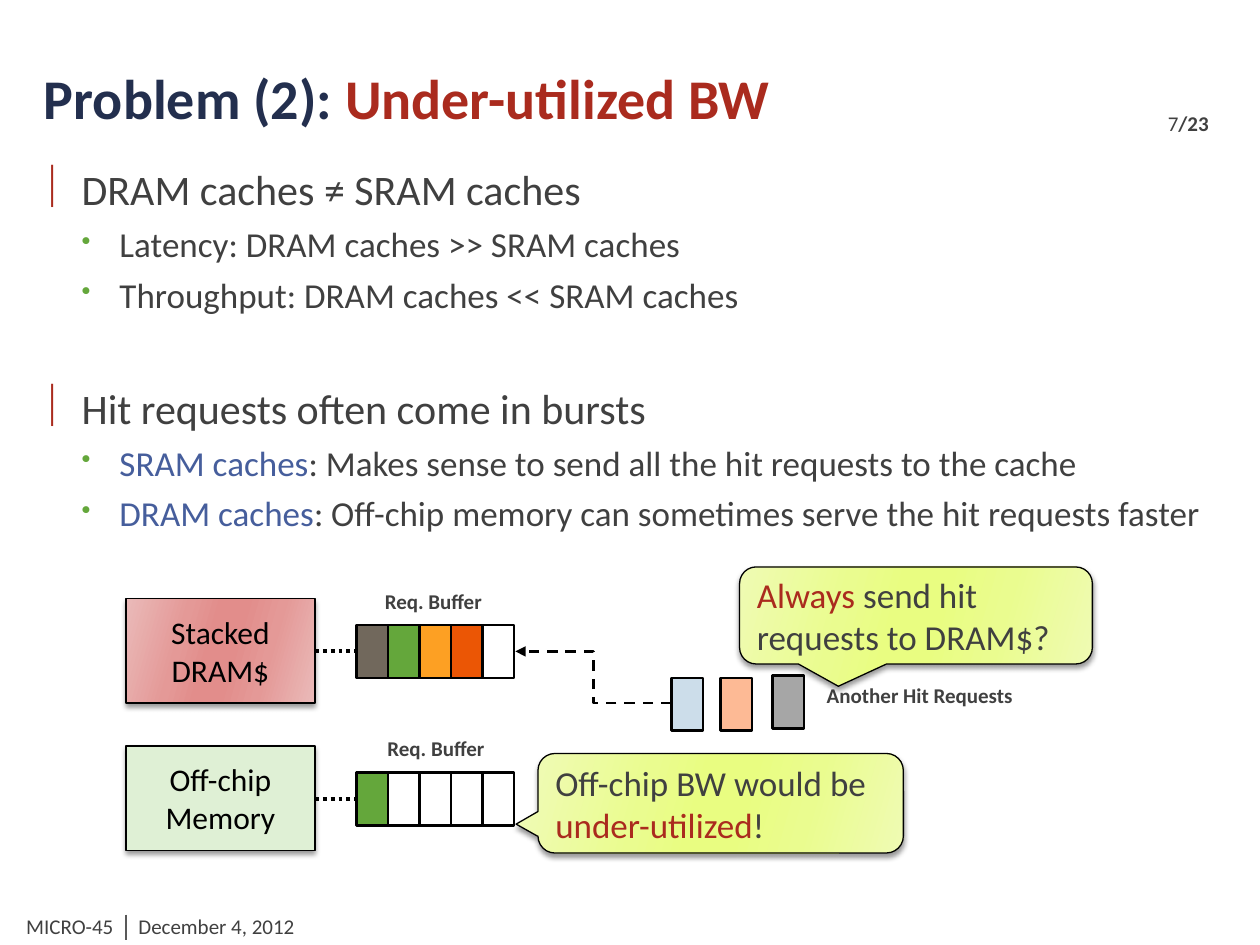
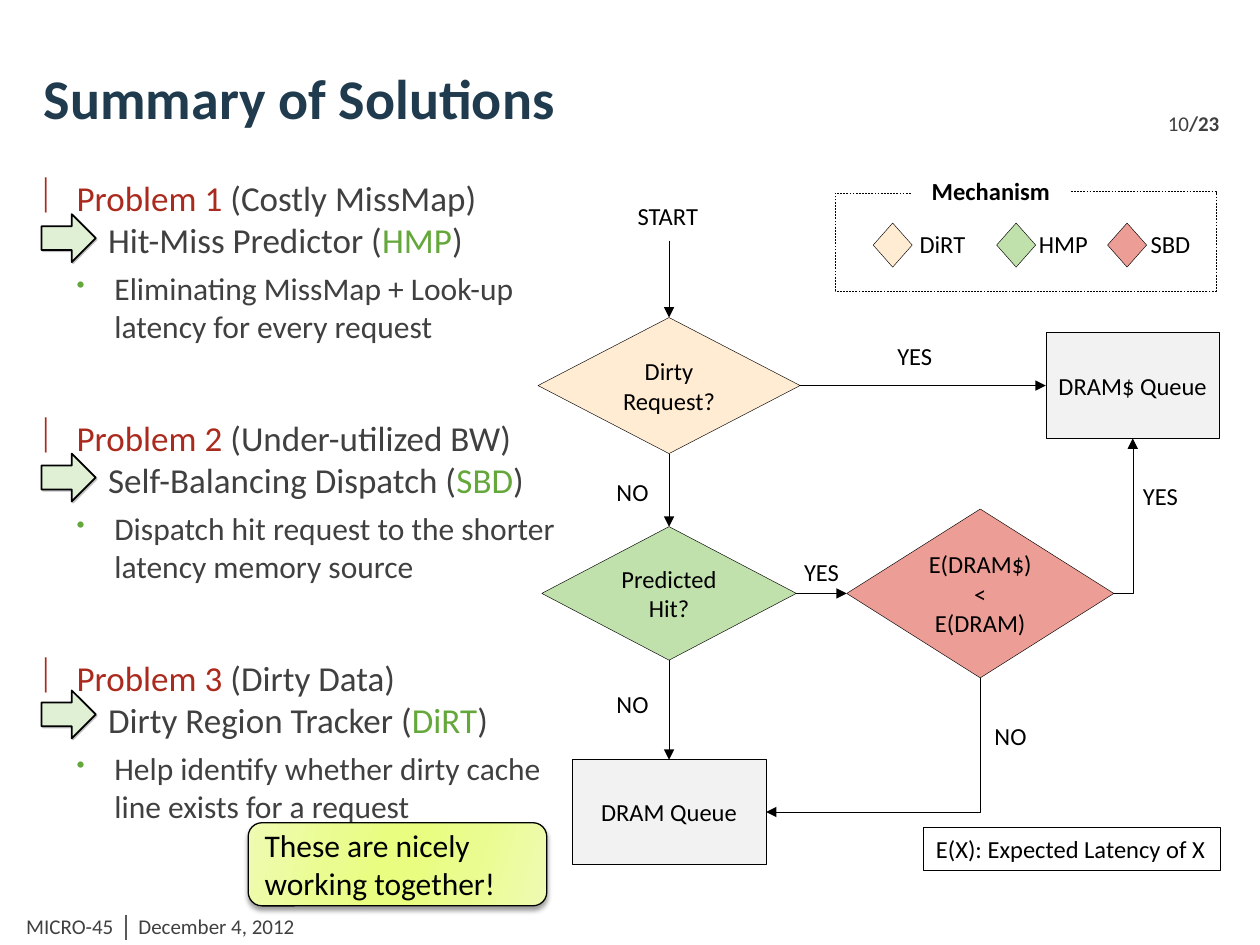
"""Build two slides on DRAM cache bandwidth and the proposed solutions."""
from lxml import etree
from pptx import Presentation
from pptx.dml.color import RGBColor
from pptx.enum.dml import MSO_LINE
from pptx.enum.shapes import MSO_CONNECTOR, MSO_SHAPE
from pptx.enum.text import MSO_ANCHOR, PP_ALIGN
from pptx.oxml.ns import qn
from pptx.util import Pt

PX = 9144
FONT = "Calibri"
LEFT, CENTER = PP_ALIGN.LEFT, PP_ALIGN.CENTER
TOP, MIDDLE, BOTTOM = MSO_ANCHOR.TOP, MSO_ANCHOR.MIDDLE, MSO_ANCHOR.BOTTOM
RECT, ROUNDED = MSO_SHAPE.RECTANGLE, MSO_SHAPE.ROUNDED_RECTANGLE
CALLOUT, ARROW = MSO_SHAPE.ROUNDED_RECTANGULAR_CALLOUT, MSO_SHAPE.RIGHT_ARROW
DECISION, PROCESS = MSO_SHAPE.FLOWCHART_DECISION, MSO_SHAPE.FLOWCHART_PROCESS
STRAIGHT, ELBOW = MSO_CONNECTOR.STRAIGHT, MSO_CONNECTOR.ELBOW
DASH, DOTS = MSO_LINE.DASH, MSO_LINE.ROUND_DOT
SITE_TOP, SITE_LEFT, SITE_BOTTOM, SITE_RIGHT = range(4)

COLOURS = {
    "text": "404040", "black": "000000", "white": "FFFFFF", "rule": "595959",
    "navy": "232F4E", "teal": "203A4E", "red": "AA2B1E", "green": "64A73B",
    "blue": "465E9C", "brown": "71685C", "amber": "FDA023", "orange": "EB5605",
    "sky": "CCDDEA", "peach": "FDBA95", "gray": "A6A6A6", "mint": "DFF0D5",
    "cream": "FFECD3", "leaf": "C0E1AB", "rose": "EC9E96", "pale": "F2F2F2",
    "shade": "808080",
    "lime edge": "EFFBB3", "lime mid": "EAFC8F", "lime core": "E9FD81",
    "coral edge": "EABAB9", "coral mid": "E49997", "coral core": "E28D8B",
}
LIME = ("lime edge", "lime mid", "lime core")
CORAL = ("coral edge", "coral mid", "coral core")
SOFT_SHADOW = ("black", 40, 3, 2, 90)
HARD_SHADOW = ("shade", 50, 0, 1, 45)


def place(page, kind, at, fill=None, weight=0.75, shadow=None):
    """Add a shape, or a text box when kind is None."""
    at = [PX * length for length in at]
    if kind is None:
        return page.shapes.add_textbox(*at)
    box = page.shapes.add_shape(kind, *at)
    properties = box._element.spPr
    if fill is None:
        box.fill.background()
    elif isinstance(fill, tuple):
        edge, mid, core = fill
        box.fill.gradient()
        box.fill.gradient_angle = 344
        stops = properties.find(".//" + qn("a:gsLst"))
        stops.clear()
        for position, name in zip((0, 30, 45, 55, 73, 100), (edge, mid, core, core, mid, edge)):
            stop = etree.SubElement(stops, qn("a:gs"), pos=str(position * 1000))
            etree.SubElement(stop, qn("a:srgbClr"), val=COLOURS[name])
    else:
        box.fill.solid()
        box.fill.fore_color.rgb = RGBColor.from_string(COLOURS[fill])
    box.line.color.rgb = RGBColor.from_string(COLOURS["black"])
    box.line.width = Pt(weight)
    box.shadow.inherit = False
    if shadow:
        name, alpha, blur, distance, angle = shadow
        effect = etree.SubElement(
            properties.find(qn("a:effectLst")), qn("a:outerShdw"), blurRad=str(Pt(blur)),
            dist=str(Pt(distance)), dir=str(angle * 60000), rotWithShape="0")
        colour = etree.SubElement(effect, qn("a:srgbClr"), val=COLOURS[name])
        etree.SubElement(colour, qn("a:alpha"), val=str(alpha * 1000))
    return box


def write(box, lines, size, colour="black", bold=False, align=LEFT, anchor=TOP):
    """Fill a box with paragraphs, each a string or a list of (text, colour) spans."""
    frame = box.text_frame
    frame.word_wrap = True
    frame.vertical_anchor = anchor
    for index, line in enumerate(lines):
        para = frame.paragraphs[0] if index == 0 else frame.add_paragraph()
        para.alignment = align
        for text, name in [(line, colour)] if isinstance(line, str) else line:
            if text == "\n":
                para.add_line_break()
                continue
            span = para.add_run()
            span.text = text
            span.font.name = FONT
            span.font.size = Pt(size)
            span.font.bold = bold
            span.font.color.rgb = RGBColor.from_string(COLOURS[name])
    return frame


deck = Presentation()
deck.slide_width, deck.slide_height = 1000 * PX, 750 * PX
links = []

slides = [
    ("7", [("Problem (2): ", "navy"), ("Under-utilized BW", "red")], (25, 125, 950, 567), [
        ("head", 24, 0, [("DRAM caches ≠ SRAM caches", "text")]),
        ("item", 20, 5, [("Latency: DRAM caches >> SRAM caches", "text")]),
        ("item", 20, 5, [("Throughput: DRAM caches << SRAM caches", "text")]),
        ("head", 24, 38, [("Hit requests often come in bursts", "text")]),
        ("item", 20, 5, [("SRAM caches", "blue"),
                         (": Makes sense to send all the hit requests to the cache", "text")]),
        ("item", 20, 5, [("DRAM caches", "blue"),
                         (": Off-chip memory can sometimes serve the hit requests faster", "text")]),
    ]),
    ("10", [("Summary of Solutions", "teal")], (21, 135, 460, 567), [
        ("head", 20, 0, [("Problem 1", "red"), (" (Costly MissMap)", "text")]),
        ("answer", 20, 0, [("Hit-Miss Predictor (", "text"), ("HMP", "green"), (")", "text")]),
        ("item", 18, 5, [("Eliminating MissMap + Look-up latency for every request", "text")]),
        ("head", 20, 41, [("Problem 2", "red"), (" (Under-utilized BW)", "text")]),
        ("answer", 20, 0, [("Self-Balancing Dispatch (", "text"), ("SBD", "green"), (")", "text")]),
        ("item", 18, 5, [("Dispatch hit request to the shorter latency memory source", "text")]),
        ("head", 20, 41, [("Problem 3", "red"), (" (Dirty Data)", "text")]),
        ("answer", 20, 0, [("Dirty Region Tracker (", "text"), ("DiRT", "green"), (")", "text")]),
        ("item", 18, 5, [("Help identify whether dirty cache", "text"), ("\n", "text"),
                         ("line exists for a request", "text")]),
    ]),
]
indents = {"head": (30, -30), "item": (60, -30), "answer": (55, 0)}
bullets = {"head": ("|", "red", 100), "item": ("•", "green", 76)}
pages = []

for number, title, body_at, body in slides:
    page = deck.slides.add_slide(deck.slide_layouts[6])
    pages.append(page)
    write(place(page, None, (11, 720, 97, 25)), ["MICRO-45"], 12, "text")
    write(place(page, None, (100, 720, 318, 25)), ["December 4, 2012"], 12, "text")
    rule = page.shapes.add_connector(STRAIGHT, 100 * PX, 726 * PX, 100 * PX, 746 * PX)
    links.append((rule, "rule", 1, None, None))
    frame = write(place(page, None, (917, 83, 67, 25)), [[(number, "text"), ("/23", "text")]], 12)
    frame.paragraphs[0].runs[1].font.bold = True
    write(place(page, None, (25, 17, 925, 92)), [title], 32, bold=True, anchor=BOTTOM)

    frame = write(place(page, None, body_at), [spans for *_, spans in body], 20)
    for para, (level, size, gap, _) in zip(frame.paragraphs, body):
        properties = para._p.get_or_add_pPr()
        margin, indent = indents[level]
        properties.set("marL", str(margin * PX))
        properties.set("indent", str(indent * PX))
        if level in bullets:
            mark, name, percent = bullets[level]
            colour = etree.SubElement(properties, qn("a:buClr"))
            etree.SubElement(colour, qn("a:srgbClr"), val=COLOURS[name])
            etree.SubElement(properties, qn("a:buSzPct"), val=str(percent * 1000))
            etree.SubElement(properties, qn("a:buChar"), char=mark)
        para.space_before = Pt(gap)
        for span in para.runs:
            span.font.size = Pt(size)

problem, summary = pages

memories = [
    (475, ["Stacked", "DRAM$"], CORAL, ["brown", "green", "amber", "orange", "white"]),
    (592, ["Off-chip", "Memory"], "mint", ["green"] + ["white"] * 4),
]
for top, name, fill, requests in memories:
    memory = place(problem, RECT, (100, top, 150, 83), fill, shadow=SOFT_SHADOW)
    write(memory, name, 18, align=CENTER, anchor=MIDDLE)
    for slot, request in enumerate(requests):
        place(problem, RECT, (283 + 25 * slot, top + 21, 25, 42), request, 1.5)
    wire = problem.shapes.add_connector(
        STRAIGHT, 250 * PX, (top + 42) * PX, 283 * PX, (top + 42) * PX)
    links.append((wire, "black", 2.25, DOTS, None))

for left, top, request in [(533, 538, "sky"), (572, 538, "peach"), (613, 536, "gray")]:
    place(problem, RECT, (left, top, 25, 42), request, 1.5)
hit_path = problem.shapes.add_connector(ELBOW, 533 * PX, 558 * PX, 409 * PX, 517 * PX)
links.append((hit_path, "black", 1.5, DASH, "a:tailEnd"))

captions = [
    ((281, 467, 126, 29), "Req. Buffer"),
    ((283, 584, 126, 29), "Req. Buffer"),
    ((642, 542, 176, 29), "Another Hit Requests"),
]
for at, caption in captions:
    frame = write(place(problem, None, at), [caption], 12, "text", True, CENTER)
    frame.margin_left = frame.margin_right = frame.margin_top = frame.margin_bottom = 0

callouts = [
    ((587, 450, 280, 77), (-0.22, 0.73, 0.17),
     [("Always", "red"), (" send hit requests to DRAM$?", "text")]),
    ((427, 598, 290, 79), (-0.56, 0.21, 0.17),
     [("Off-chip BW would be ", "text"), ("under-utilized", "red"), ("!", "text")]),
]
for at, pointer, spans in callouts:
    callout = place(problem, CALLOUT, at, LIME, shadow=SOFT_SHADOW)
    for index, value in enumerate(pointer):
        callout.adjustments[index] = value
    write(callout, [spans], 20, anchor=MIDDLE)

for top in (170, 360, 548):
    place(summary, ARROW, (33, top, 43, 38), "mint", 1, HARD_SHADOW)
note = place(summary, ROUNDED, (197, 653, 237, 66), LIME, shadow=SOFT_SHADOW)
write(note, ["These are nicely working together!"], 18, anchor=MIDDLE)

steps = [
    ("dirty", DECISION, (427, 252, 208, 108), "cream", ["Dirty Request?"]),
    ("cache", PROCESS, (830, 264, 138, 84), "pale", ["DRAM$ Queue"]),
    ("memory", PROCESS, (454, 603, 154, 83), "pale", ["DRAM Queue"]),
    ("hit", DECISION, (430, 418, 202, 106), "leaf", ["Predicted Hit?"]),
    ("latency", DECISION, (672, 404, 212, 134), "rose", ["E(DRAM$) <", "E(DRAM)"]),
]
flow = {}
for name, kind, at, fill, lines in steps:
    flow[name] = place(summary, kind, at, fill, 0.25)
    frame = write(flow[name], lines, 14, align=CENTER, anchor=MIDDLE)
    if kind == PROCESS:
        frame.margin_left = frame.margin_right = 4 * PX

flow_links = [
    ("dirty", SITE_RIGHT, "cache", SITE_LEFT, STRAIGHT, "a:tailEnd"),
    ("dirty", SITE_BOTTOM, "hit", SITE_TOP, STRAIGHT, "a:tailEnd"),
    ("hit", SITE_BOTTOM, "memory", SITE_TOP, STRAIGHT, "a:tailEnd"),
    ("hit", SITE_RIGHT, "latency", SITE_LEFT, STRAIGHT, "a:tailEnd"),
    ("latency", SITE_RIGHT, "cache", SITE_BOTTOM, ELBOW, "a:tailEnd"),
    ("memory", SITE_RIGHT, "latency", SITE_BOTTOM, ELBOW, "a:headEnd"),
]
for source, source_site, target, target_site, kind, arrow in flow_links:
    link = summary.shapes.add_connector(kind, 0, 0, 0, 0)
    link.begin_connect(flow[source], source_site)
    link.end_connect(flow[target], target_site)
    if kind == ELBOW:
        link._element.spPr.find(qn("a:prstGeom")).set("prst", "bentConnector2")
    links.append((link, "black", 0.25, None, arrow))
entry = summary.shapes.add_connector(STRAIGHT, 531 * PX, 191 * PX, 531 * PX, 252 * PX)
links.append((entry, "black", 0.25, None, "a:tailEnd"))

labels = [
    (494, 155, 72, "START"), (697, 266, 58, "YES"), (473, 374, 58, "NO"),
    (473, 542, 58, "NO"), (892, 377, 58, "YES"), (773, 567, 58, "NO"),
    (623, 437, 58, "YES"), (716, 177, 64, "DiRT"), (806, 177, 76, "HMP"),
    (891, 177, 76, "SBD"),
]
for left, top, width, label in labels:
    write(place(summary, None, (left, top, width, 34)), [label], 14, align=CENTER)

for left, fill in [(693, "cream"), (791, "leaf"), (879, "rose")]:
    place(summary, DECISION, (left, 177, 31, 35), fill, 0.25)
write(place(summary, None, (723, 135, 127, 34)), ["Mechanism"], 14, bold=True, align=CENTER)
outline = summary.shapes.build_freeform(850, 152, scale=PX)
outline.add_line_segments([(965, 152), (965, 231), (663, 231), (663, 153), (723, 153)], close=False)
legend = outline.convert_to_shape()
legend.fill.background()
legend.line.color.rgb = RGBColor.from_string(COLOURS["black"])
legend.line.width = Pt(0.25)
legend.line.dash_style = DASH
legend.shadow.inherit = False

frame = write(place(summary, RECT, (733, 657, 236, 34)), ["E(X): Expected Latency of X"], 14)
frame.margin_right = 0

for link, name, weight, dash, arrow in links:
    link.line.color.rgb = RGBColor.from_string(COLOURS[name])
    link.line.width = Pt(weight)
    if dash:
        link.line.dash_style = dash
    properties = link._element.spPr
    if arrow:
        etree.SubElement(properties.find(qn("a:ln")), qn(arrow), type="triangle")
    etree.SubElement(properties, qn("a:effectLst"))

deck.save("out.pptx")
